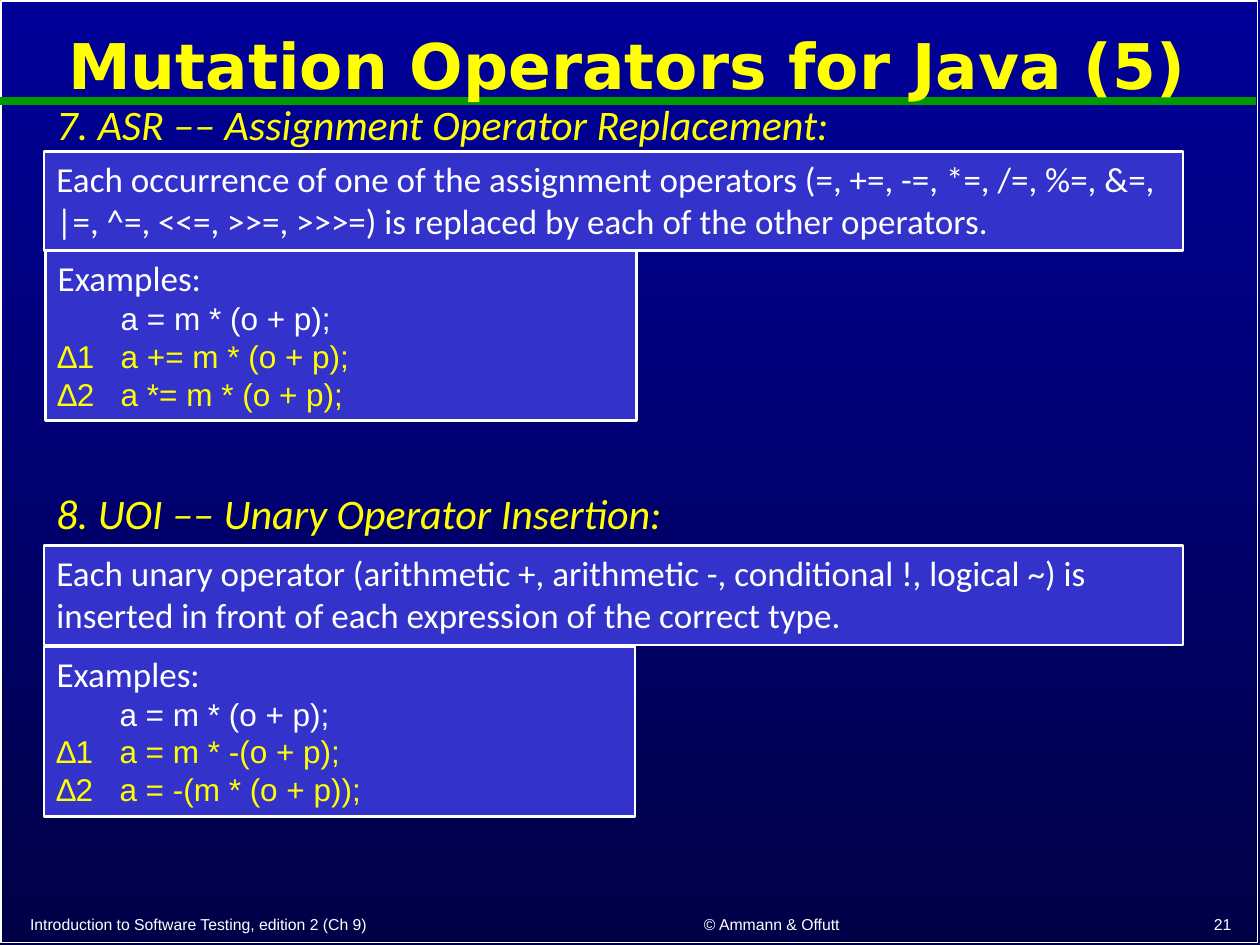
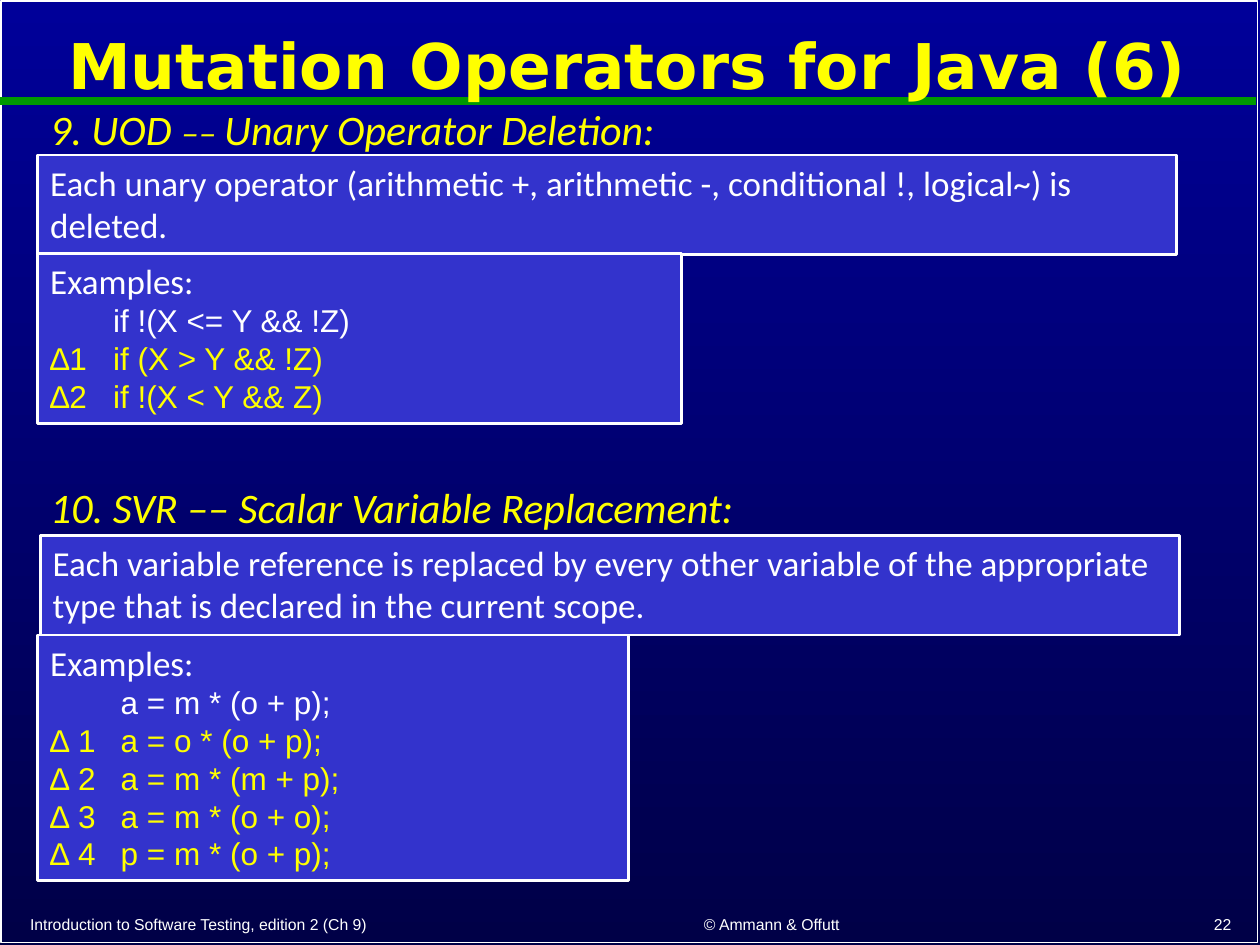
from pptx import Presentation
from pptx.dml.color import RGBColor
from pptx.enum.shapes import MSO_CONNECTOR, MSO_SHAPE
from pptx.enum.text import MSO_ANCHOR, PP_ALIGN
from pptx.oxml.ns import qn
from pptx.util import Inches, Pt
from lxml import etree

WHITE, YELLOW, DASH_YELLOW = "FFFFFF", "FFFF00", "FAFD00"
BOX_BLUE, BAND_GREEN = "3333CC", "009900"
BACKGROUND = ("000099", "000047")

TITLE = {"name": "DejaVu Sans", "size": Pt(36), "bold": True}
HEADING = {"name": "Calibri", "size": Pt(24), "italic": True}
BODY = {"name": "Calibri", "size": Pt(20)}
CODE = {"name": "Arial", "size": Pt(18)}
FOOTER = {"name": "Arial", "size": Pt(9)}

RULE_SIZE = (9.04, 0.79)

SLIDES = [
    ("Mutation Operators for Java (5)", "21", [
        {"heading": ("7. ASR ", "––", " Assignment Operator Replacement:"),
         "heading_at": (0.35, 0.73), "rule_at": (0.35, 1.2),
         "rule": "Each occurrence of one of the assignment operators (=, +=, -=, *=, /=, %=, &=, "
                 "|=, ^=, <<=, >>=, >>>=) is replaced by each of the other operators.",
         "examples_at": (0.36, 1.99, 4.69, 1.35),
         "code": "a = m * (o + p);",
         "mutants": ["∆1\ta += m * (o + p);", "∆2\ta *= m * (o + p);"]},
        {"heading": ("8. UOI ", "–– ", "Unary Operator Insertion:"),
         "heading_at": (0.35, 3.82), "rule_at": (0.35, 4.33),
         "rule": "Each unary operator (arithmetic +, arithmetic -, conditional !, logical ~) is "
                 "inserted in front of each expression of the correct type.",
         "examples_at": (0.35, 5.13, 4.69, 1.35),
         "code": "a = m * (o + p);",
         "mutants": ["∆1\ta = m * -(o + p);", "∆2\ta = -(m * (o + p));"]},
    ]),
    ("Mutation Operators for Java (6)", "22", [
        {"heading": ("9. UOD ", "–– ", "Unary Operator Deletion:"), "dash_size": 20,
         "heading_at": (0.3, 0.77), "rule_at": (0.3, 1.23),
         "rule": "Each unary operator (arithmetic +, arithmetic -, conditional !, logical~) is "
                 "deleted.",
         "examples_at": (0.3, 2.01, 5.11, 1.35),
         "code": "if !(X <= Y && !Z)",
         "mutants": ["∆1\tif (X > Y && !Z)", "∆2\tif !(X < Y && Z)"]},
        {"heading": ("10. SVR ", "––", " Scalar Variable Replacement:"),
         "heading_at": (0.3, 3.77), "rule_at": (0.32, 4.25),
         "rule": "Each variable reference is replaced by every other variable of the appropriate "
                 "type that is declared in the current scope.",
         "examples_at": (0.3, 5.04, 4.69, 1.95), "code_indent": 0.56,
         "code": "a = m * (o + p);",
         "mutants": ["∆ 1\ta = o * (o + p);", "∆ 2\ta = m * (m + p);",
                     "∆ 3\ta = m * (o + o);", "∆ 4\tp = m * (o + p);"]},
    ]),
]


def rgb(value):
    """Turn a hex string into a colour."""
    return RGBColor.from_string(value)


def add_run(p, text, font, color):
    """Append a run with the given font values and colour."""
    r = p.add_run()
    r.text = text
    for name, value in font.items():
        setattr(r.font, name, value)
    r.font.color.rgb = rgb(color)


def set_indent(p, left, first=0):
    """Set the left margin and first-line indent of a paragraph in inches."""
    pPr = p._p.get_or_add_pPr()
    pPr.set("marL", str(Inches(left)))
    pPr.set("indent", str(Inches(first)))


def add_text(s, at, align=PP_ALIGN.LEFT, anchor=MSO_ANCHOR.TOP):
    """Add a wrapping text box and return its first paragraph."""
    tf = s.shapes.add_textbox(*map(Inches, at)).text_frame
    tf.word_wrap = True
    tf.vertical_anchor = anchor
    p = tf.paragraphs[0]
    p.alignment = align
    return p


def add_rect(s, at, line_width, fill=None):
    """Add a white-bordered rectangle and return its text frame."""
    sp = s.shapes.add_shape(MSO_SHAPE.RECTANGLE, *map(Inches, at))
    sp.shadow.inherit = False
    if fill:
        sp.fill.solid()
        sp.fill.fore_color.rgb = rgb(fill)
    else:
        sp.fill.background()
    sp.line.color.rgb = rgb(WHITE)
    sp.line.width = Pt(line_width)
    tf = sp.text_frame
    tf.word_wrap = True
    tf.vertical_anchor = MSO_ANCHOR.TOP
    tf.paragraphs[0].alignment = PP_ALIGN.LEFT
    return tf


def add_band(s):
    """Add the green line below the title."""
    y = Inches(0.8)
    line = s.shapes.add_connector(MSO_CONNECTOR.STRAIGHT, 0, y, Inches(9.97), y)
    line.line.color.rgb = rgb(BAND_GREEN)
    line.line.width = Pt(4.5)
    etree.SubElement(line._element.spPr, qn("a:effectLst"))


def add_frame(s, title, number):
    """Add the background, border, band, footers and title."""
    fill = s.background.fill
    fill.gradient()
    fill.gradient_angle = 270
    for stop, color in zip(fill.gradient_stops, BACKGROUND):
        stop.color.rgb = rgb(color)
    add_rect(s, (0.01, 0.01, 9.97, 7.47), 1)
    add_band(s)
    footers = [
        ("Introduction to Software Testing, edition 2 (Ch 9)", 0.14, 4.26, PP_ALIGN.LEFT),
        ("© Ammann & Offutt", 4.54, 3.17, PP_ALIGN.CENTER),
        (number, 7.88, 1.99, PP_ALIGN.RIGHT),
    ]
    for text, left, width, align in footers:
        p = add_text(s, (left, 7.17, width, 0.29), align, MSO_ANCHOR.BOTTOM)
        add_run(p, text, FOOTER, WHITE)
    p = add_text(s, (0.01, 0.11, 9.93, 0.88), PP_ALIGN.CENTER, MSO_ANCHOR.MIDDLE)
    p.line_spacing = 0.9
    add_run(p, title, TITLE, YELLOW)


def add_heading(s, at, parts, dash_size):
    """Add an operator heading whose dash has its own colour and size."""
    p = add_text(s, (*at, 9.46, 0.59))
    name, dash, meaning = parts
    add_run(p, name, HEADING, YELLOW)
    add_run(p, dash, HEADING | {"size": Pt(dash_size)}, DASH_YELLOW)
    add_run(p, meaning, HEADING, YELLOW)


def add_examples(s, at, code, mutants, indent):
    """Add the example box with the code line and its mutants."""
    tf = add_rect(s, at, 1.5, BOX_BLUE)
    add_run(tf.paragraphs[0], "Examples:", BODY, WHITE)
    lines = [(code, WHITE, 0)] + [(m, YELLOW, -indent) for m in mutants]
    for text, color, first in lines:
        p = tf.add_paragraph()
        p.alignment = PP_ALIGN.LEFT
        set_indent(p, indent, first)
        add_run(p, text, CODE, color)


def add_operator(s, op):
    """Add the heading, rule and examples of one mutation operator."""
    tf = add_rect(s, (*op["rule_at"], *RULE_SIZE), 1.5, BOX_BLUE)
    add_run(tf.paragraphs[0], op["rule"], BODY, WHITE)
    add_heading(s, op["heading_at"], op["heading"], op.get("dash_size", 24))
    add_examples(s, op["examples_at"], op["code"], op["mutants"], op.get("code_indent", 0.5))


def main():
    """Build and save the slides."""
    prs = Presentation()
    prs.slide_width, prs.slide_height = Inches(10), Inches(7.5)
    for title, number, operators in SLIDES:
        s = prs.slides.add_slide(prs.slide_layouts[6])
        add_frame(s, title, number)
        for op in operators:
            add_operator(s, op)
    prs.save("out.pptx")


if __name__ == "__main__":
    main()
